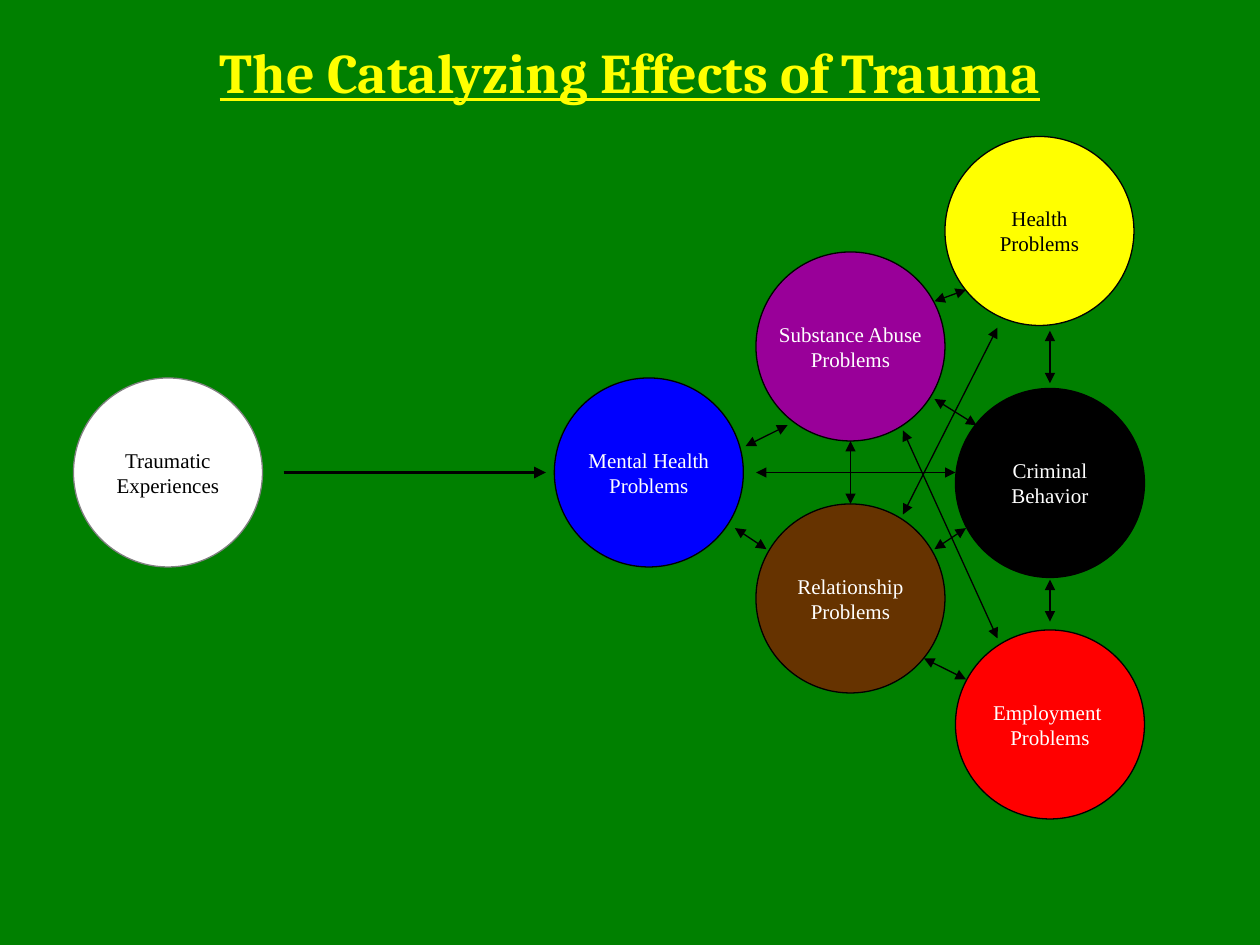
import pptx
import pptx.util
import pptx.dml.color
import pptx.enum.shapes
import pptx.enum.text
import pptx.oxml.ns
from lxml import etree

COLORS = {
    "green": "008000", "yellow": "FFFF00", "white": "FFFFFF", "black": "000000",
    "gray": "808080", "brown": "663300", "purple": "990099", "blue": "0000FF",
    "red": "FF0000",
}
TITLE = "The Catalyzing Effects of Trauma"
COLS, ROWS, DIAMETER = 120, 90, 18

CIRCLES = [
    (72, 48, "brown", "black", "white", ("Relationship", "Problems")),
    (72, 24, "purple", "black", "white", ("Substance Abuse", "Problems")),
    (52.8, 36, "blue", "black", "white", ("Mental Health", "Problems")),
    (91, 37, "black", "black", "white", ("Criminal", "Behavior")),
    (90, 13, "yellow", "black", "black", ("Health", "Problems")),
    (91, 60, "red", "black", "white", ("Employment ", "Problems")),
    (7, 36, "white", "gray", "black", ("Traumatic", "Experiences")),
]
CAUSE = (27, 45, 52, 45)
MUTUAL = [
    (71, 42.5, 75, 40.5),
    (89, 52.3, 92, 50.3),
    (100, 59.2, 100, 55.2),
    (92, 64.7, 88, 62.7),
    (100, 36.5, 100, 31.5),
    (73, 52.3, 70, 50.3),
    (89, 28.7, 92, 27.6),
    (93, 40.5, 89, 38),
    (81, 48, 81, 42),
    (86, 49, 95, 31.2),
    (72, 45, 91, 45),
    (95, 60.8, 86, 41),
]

prs = pptx.Presentation()
prs.slide_width = pptx.util.Inches(10)
prs.slide_height = pptx.util.Inches(7.5)
s = prs.slides.add_slide(prs.slide_layouts[5])


def rgb(name):
    return pptx.dml.color.RGBColor.from_string(COLORS[name])


def x(col):
    return round(prs.slide_width * col / COLS)


def y(row):
    return round(prs.slide_height * row / ROWS)


def add_text(p, text, font, size, color):
    p.alignment = pptx.enum.text.PP_ALIGN.CENTER
    r = p.add_run()
    r.text = text
    r.font.name = font
    r.font.size = pptx.util.Pt(size)
    r.font.color.rgb = rgb(color)
    return r


def add_circle(col, row, fill, line, color, words):
    sp = s.shapes.add_shape(pptx.enum.shapes.MSO_SHAPE.OVAL,
                            x(col), y(row), x(DIAMETER), y(DIAMETER))
    sp.shadow.inherit = False
    sp.fill.solid()
    sp.fill.fore_color.rgb = rgb(fill)
    sp.line.color.rgb = rgb(line)
    sp.line.width = pptx.util.Pt(0.75)
    tf = sp.text_frame
    tf.word_wrap = False
    tf.vertical_anchor = pptx.enum.text.MSO_ANCHOR.MIDDLE
    for i, text in enumerate(words):
        p = tf.add_paragraph() if i else tf.paragraphs[0]
        add_text(p, text, "Times New Roman", 12, color)


def add_arrow(ends, width, heads):
    x1, y1, x2, y2 = ends
    c = s.shapes.add_connector(pptx.enum.shapes.MSO_CONNECTOR.STRAIGHT,
                               x(x1), y(y1), x(x2), y(y2))
    c.line.color.rgb = rgb("black")
    c.line.width = pptx.util.Pt(width)
    ln = c.line._get_or_add_ln()
    for head in heads:
        etree.SubElement(ln, pptx.oxml.ns.qn("a:" + head), type="triangle")
    etree.SubElement(c._element.spPr, pptx.oxml.ns.qn("a:effectLst"))


s.background.fill.solid()
s.background.fill.fore_color.rgb = rgb("green")

title = s.shapes.title
title.left, title.top, title.width, title.height = x(0), y(3), x(COLS), y(7.7)
tf = title.text_frame
tf.word_wrap = True
tf.auto_size = pptx.enum.text.MSO_AUTO_SIZE.SHAPE_TO_FIT_TEXT
tf.vertical_anchor = pptx.enum.text.MSO_ANCHOR.TOP
r = add_text(tf.paragraphs[0], TITLE, "Cambria", 32, "yellow")
r.font.bold = True
r.font.underline = True

for circle in CIRCLES:
    add_circle(*circle)
add_arrow(CAUSE, 2.25, ["tailEnd"])
for ends in MUTUAL:
    add_arrow(ends, 0.75, ["headEnd", "tailEnd"])

prs.save("out.pptx")
